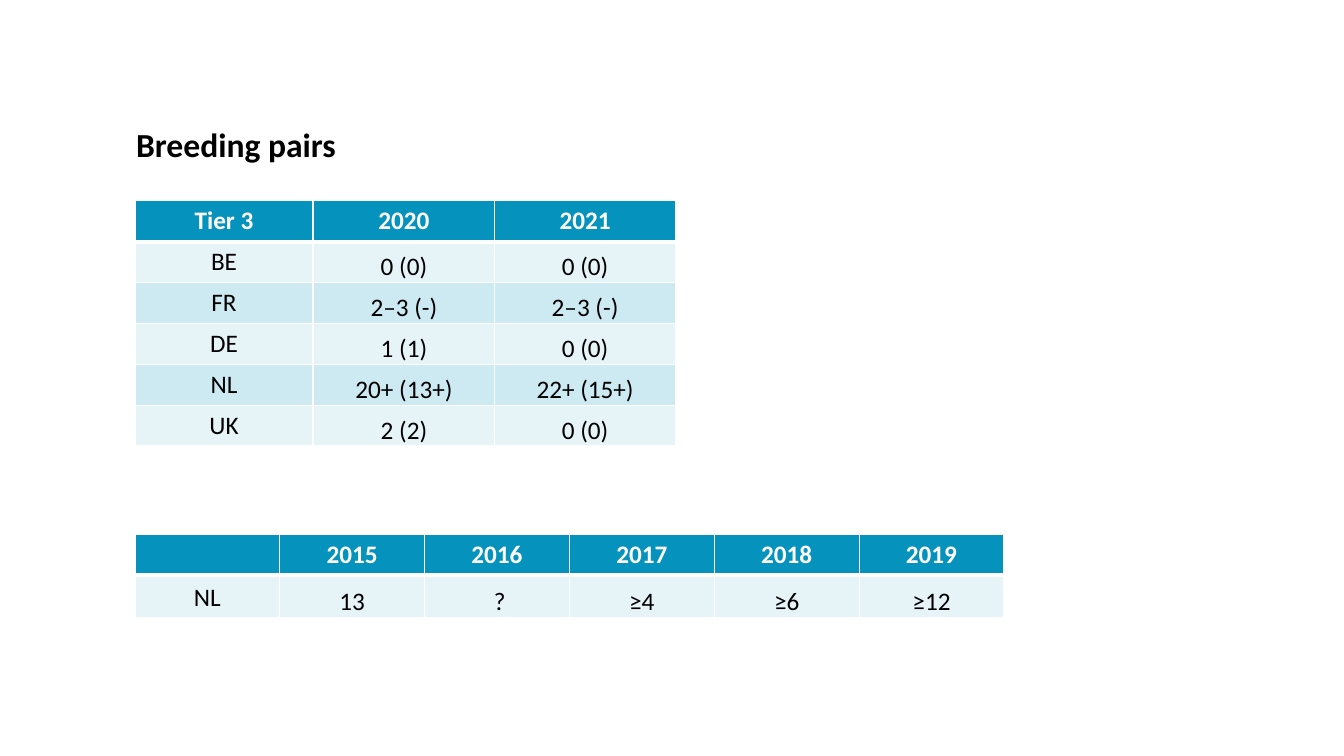
from lxml.etree import SubElement as Sub
from pptx import Presentation
from pptx.dml.color import RGBColor
from pptx.enum.text import MSO_ANCHOR as Anchor, PP_ALIGN as Align
from pptx.oxml.ns import qn
from pptx.util import Cm, Pt

TITLE = "Breeding pairs"
TIERS = [
    ("Tier 3", "2020", "2021"),
    ("BE", "0 (0)", "0 (0)"),
    ("FR", "2–3 (-)", "2–3 (-)"),
    ("DE", "1 (1)", "0 (0)"),
    ("NL", "20+ (13+)", "22+ (15+)"),
    ("UK", "2 (2)", "0 (0)"),
]
YEARS = [
    ("", "2015", "2016", "2017", "2018", "2019"),
    ("NL", "13", " ?", "≥4", "≥6", "≥12"),
]
HEAD, PALE, BAND = "0592BD", "E6F4F8", "CDE9F2"
BLACK, WHITE = "000000", "FFFFFF"
FONT = "Calibri"
LEFT, ROW = 3.4, 1.03


def color(code):
    return RGBColor.from_string(code)


def write(para, text, size, code, bold):
    run = para.add_run()
    run.text = text
    font = run.font
    font.name, font.size, font.bold = FONT, Pt(size), bold
    font.color.rgb = color(code)


def edge(cell, head):
    """Draw white cell borders, with a thick rule under the header."""
    props = cell._tc.get_or_add_tcPr()
    for side in "LRTB":
        width = Pt(3) if head and side == "B" else Pt(1)
        line = Sub(props, qn(f"a:ln{side}"), w=str(int(width)))
        fill = Sub(line, qn("a:solidFill"))
        Sub(fill, qn("a:srgbClr"), val=WHITE)


def add_grid(slide, rows, top, widths, inset, label_space):
    """Add a table; inset is the side margin of its value cells."""
    frame = slide.shapes.add_table(
        len(rows), len(widths), Cm(LEFT), Cm(top),
        Cm(sum(widths)), Cm(ROW * len(rows)))
    table = frame.table
    for col, width in zip(table.columns, widths):
        col.width = Cm(width)
    for r, row in enumerate(rows):
        head = r == 0
        table.rows[r].height = Cm(ROW)
        for c, text in enumerate(row):
            cell = table.cell(r, c)
            edge(cell, head)
            cell.fill.solid()
            cell.fill.fore_color.rgb = color(
                HEAD if head else PALE if r % 2 else BAND)
            para = cell.text_frame.paragraphs[0]
            para.alignment = Align.CENTER
            para.font.size = Pt(18)
            if not head:
                para.line_spacing = 1.07 if c else label_space
            if not head and c:
                cell.vertical_anchor = Anchor.BOTTOM
                cell.margin_left = cell.margin_right = Cm(inset)
                cell.margin_top = cell.margin_bottom = 0
            if text:
                write(para, text, 18, WHITE if head else BLACK, head)


def add_title(slide):
    box = slide.shapes.add_textbox(Cm(2.54), Cm(3.12), Cm(18.03), Cm(1.45))
    frame = box.text_frame
    frame.word_wrap = True
    frame.margin_left = Cm(0.89)
    para = frame.paragraphs[0]
    para.line_spacing = 0.9
    write(para, TITLE, 24, BLACK, True)


def main():
    deck = Presentation()
    deck.slide_width, deck.slide_height = Cm(33.87), Cm(19.05)
    slide = deck.slides.add_slide(deck.slide_layouts[6])
    add_grid(slide, TIERS, 5.06, [4.49, 4.58, 4.55], 0.18, 1.0)
    add_title(slide)
    add_grid(slide, YEARS, 13.46, [3.65] * 6, 0, 1.07)
    deck.save("out.pptx")


if __name__ == "__main__":
    main()
